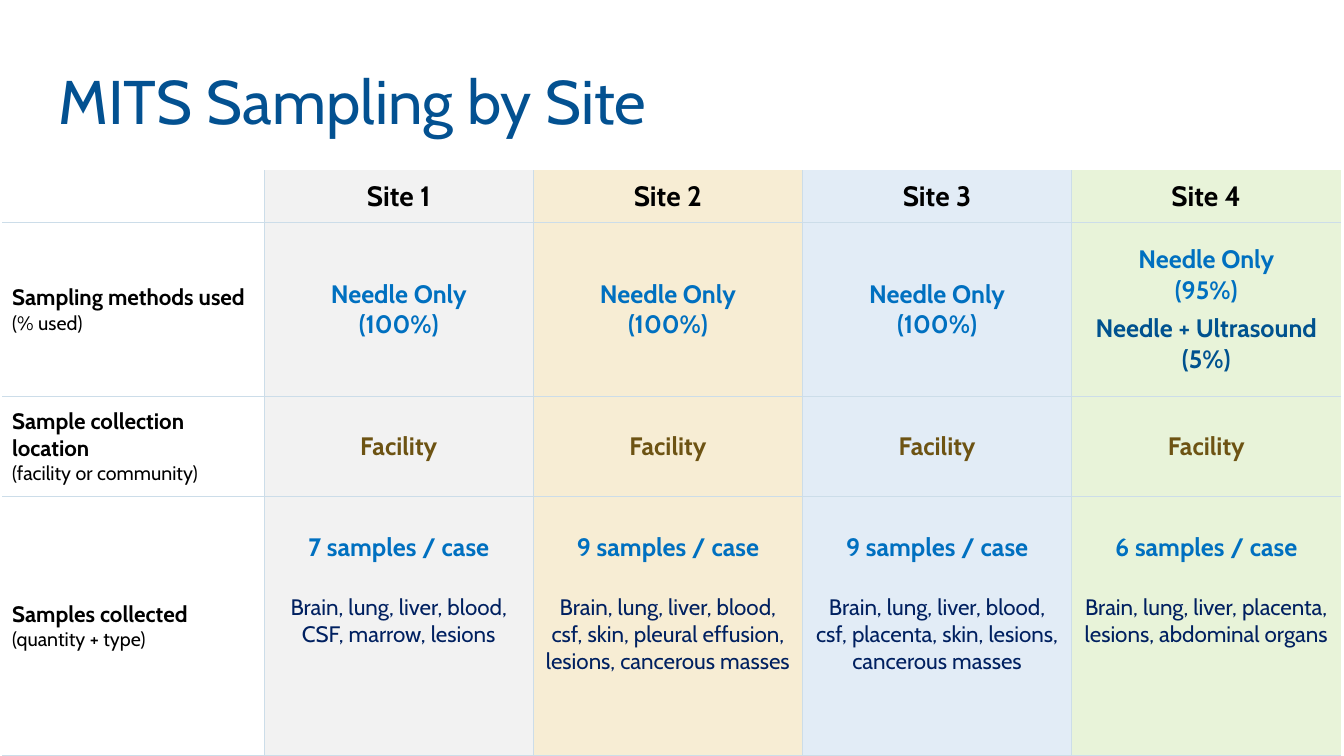
import pptx
import pptx.dml.color
import pptx.enum.text
import pptx.oxml
import pptx.oxml.ns
import pptx.util

Inches = pptx.util.Inches
Pt = pptx.util.Pt
RGBColor = pptx.dml.color.RGBColor
ALIGN = pptx.enum.text.PP_ALIGN
ANCHOR = pptx.enum.text.MSO_ANCHOR

TITLE_BLUE = RGBColor(0x03, 0x51, 0x91)
BLACK = RGBColor(0x00, 0x00, 0x00)
BLUE = RGBColor(0x00, 0x70, 0xC0)
DEEP_BLUE = RGBColor(0x00, 0x52, 0x8F)
BROWN = RGBColor(0x6D, 0x53, 0x13)
NAVY = RGBColor(0x00, 0x20, 0x60)
RULE = RGBColor(0xCC, 0xDD, 0xE9)
SITE_FILLS = [
    RGBColor(0xF2, 0xF2, 0xF2),
    RGBColor(0xF7, 0xED, 0xD4),
    RGBColor(0xE2, 0xEC, 0xF6),
    RGBColor(0xE8, 0xF3, 0xD9),
]

FORMATS = {
    "title": {"size": Pt(44), "bold": False, "color": TITLE_BLUE},
    "site": {"size": Pt(20), "bold": True, "color": BLACK},
    "label": {"size": Pt(16), "bold": True, "color": BLACK},
    "note": {"size": Pt(14), "bold": False, "color": BLACK},
    "needle": {"size": Pt(18), "bold": True, "color": BLUE},
    "ultrasound": {"size": Pt(18), "bold": True, "color": DEEP_BLUE},
    "place": {"size": Pt(18), "bold": True, "color": BROWN},
    "count": {"size": Pt(18), "bold": True, "color": BLUE},
    "organs": {"size": Pt(16), "bold": False, "color": NAVY},
}

LABELS = [
    ("Sampling methods used", "(% used)"),
    ("Sample collection location", "(facility or community)"),
    ("Samples collected", "(quantity + type)"),
]
SITES = [
    ("Site 1", "(100%)", None, "7 samples / case",
     "Brain, lung, liver, blood, CSF, marrow, lesions"),
    ("Site 2", "(100%)", None, "9 samples / case",
     "Brain, lung, liver, blood, csf, skin, pleural effusion, lesions, cancerous masses"),
    ("Site 3", "(100%)", None, "9 samples / case",
     "Brain, lung, liver, blood, csf, placenta, skin, lesions, cancerous masses"),
    ("Site 4", "(95%)", "(5%)", "6 samples / case",
     "Brain, lung, liver, placenta, lesions, abdominal organs"),
]
COLUMN_WIDTHS = [2.6] + [2.67] * len(SITES)
ROW_HEIGHTS = [0.52, 1.72, 1, 2.57]


def format_font(font, kind):
    """Give a font the values of one of the named formats."""
    for name, value in FORMATS[kind].items():
        if name == "color":
            font.color.rgb = value
        else:
            setattr(font, name, value)
    font.name = "Cabin"


def write_lines(frame, lines, align):
    """Write lines of text, each with its format and space before."""
    for index, (text, kind, gap) in enumerate(lines):
        para = frame.add_paragraph() if index else frame.paragraphs[0]
        para.alignment = align
        if index and gap:
            para.space_before = Pt(gap)
        span = para.add_run()
        span.text = text
        format_font(span.font, kind)


def draw_borders(cell, shown):
    """Rule the shown sides of a cell and clear the others."""
    properties = cell._tc.get_or_add_tcPr()
    for side in ("L", "R", "T", "B"):
        paint = "<a:noFill/>"
        if side in shown:
            paint = f'<a:solidFill><a:srgbClr val="{RULE}"/></a:solidFill>'
        properties.append(pptx.oxml.parse_xml(
            f'<a:ln{side} {pptx.oxml.ns.nsdecls("a")} w="{Pt(1)}">{paint}</a:ln{side}>'))


def site_column(site):
    """List the lines of each cell in a site's column."""
    name, needle_share, ultrasound_share, count, organs = site
    methods = [("Needle Only", "needle", 0), (needle_share, "needle", 0)]
    if ultrasound_share:
        methods += [("Needle + Ultrasound", "ultrasound", 5),
                    (ultrasound_share, "ultrasound", 0)]
    return [
        [(name, "site", 0)],
        methods,
        [("Facility", "place", 0)],
        [(count, "count", 0), (organs, "organs", 22)],
    ]


def add_title(page, left, top, width, height):
    """Place the slide title in the given box."""
    box = page.shapes.title
    box.left, box.top, box.width, box.height = map(Inches, (left, top, width, height))
    frame = box.text_frame
    frame.word_wrap = True
    frame.auto_size = pptx.enum.text.MSO_AUTO_SIZE.NONE
    frame.vertical_anchor = ANCHOR.MIDDLE
    write_lines(frame, [("MITS Sampling by Site", "title", 0)], ALIGN.LEFT)
    frame.paragraphs[0].line_spacing = 0.9


def add_site_table(page, left, top):
    """Place the table of sites with its corner at the given point."""
    labels = [[]] + [[(label, "label", 0), (note, "note", 0)] for label, note in LABELS]
    columns = [labels] + [site_column(site) for site in SITES]
    last = len(columns) - 1
    table = page.shapes.add_table(
        len(ROW_HEIGHTS), len(columns), Inches(left), Inches(top),
        Inches(sum(COLUMN_WIDTHS)), Inches(sum(ROW_HEIGHTS))).table
    table.first_row = table.horz_banding = False
    for row, height in zip(table.rows, ROW_HEIGHTS):
        row.height = Inches(height)
    for across, (column, width) in enumerate(zip(columns, COLUMN_WIDTHS)):
        table.columns[across].width = Inches(width)
        for down, lines in enumerate(column):
            cell = table.cell(down, across)
            shown = "B" + "L" * (across > 0) + "R" * (across < last) + "T" * (down > 0)
            draw_borders(cell, shown)
            cell.vertical_anchor = ANCHOR.MIDDLE
            if across:
                cell.fill.solid()
                cell.fill.fore_color.rgb = SITE_FILLS[across - 1]
            else:
                cell.fill.background()
            if across and down == len(column) - 1:
                cell.vertical_anchor = ANCHOR.TOP
                cell.margin_top = Inches(0.35)
            write_lines(cell.text_frame, lines, ALIGN.CENTER if across else ALIGN.LEFT)


def main():
    """Build the slide and save the deck."""
    deck = pptx.Presentation()
    deck.slide_width, deck.slide_height = Inches(13.33), Inches(7.5)
    page = deck.slides.add_slide(deck.slide_layouts[5])
    add_title(page, 0.48, 0.38, 11.5, 1.31)
    add_site_table(page, 0.02, 1.69)
    deck.save("out.pptx")


if __name__ == "__main__":
    main()
